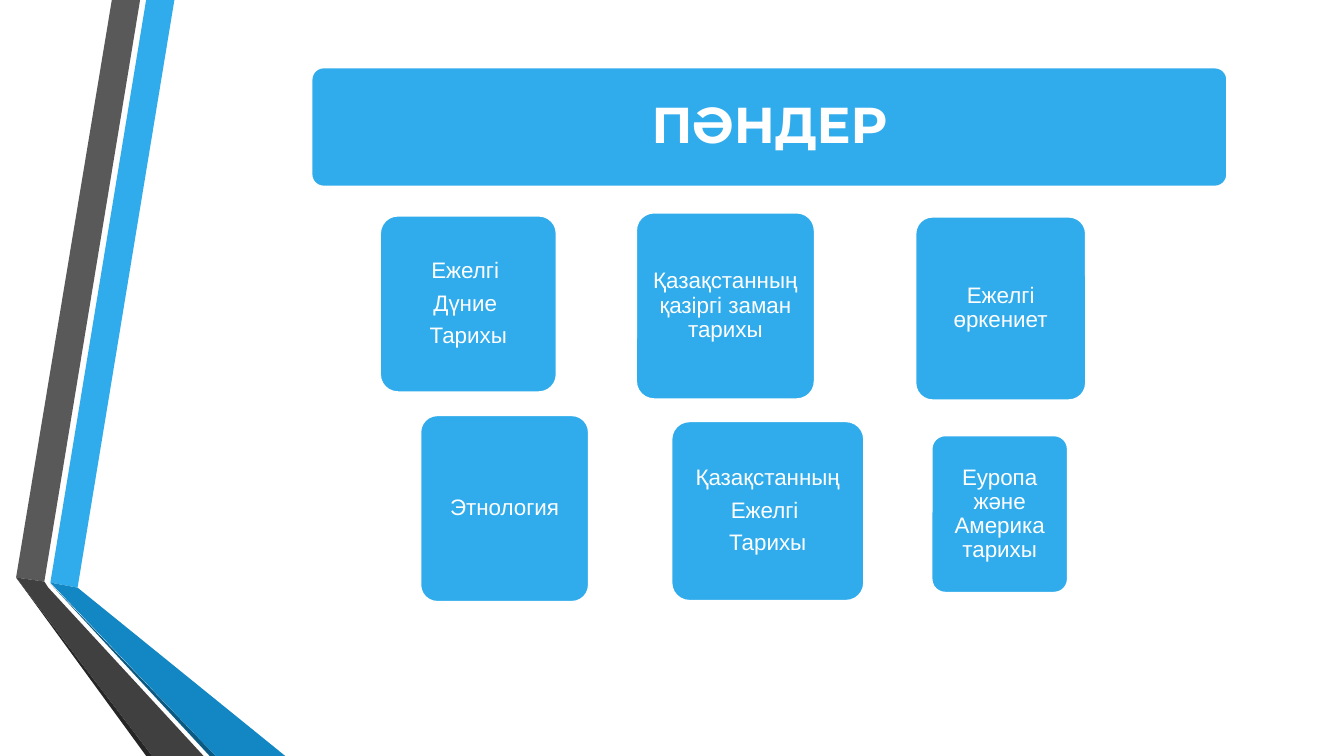
from pptx import Presentation
from pptx.dml.color import RGBColor
from pptx.enum.shapes import MSO_SHAPE
from pptx.enum.text import MSO_ANCHOR, PP_ALIGN
from pptx.util import Pt

PX = 9144
WHITE = RGBColor(0xFF, 0xFF, 0xFF)
BLUE = RGBColor(0x30, 0xAC, 0xEC)
MID_BLUE = RGBColor(0x12, 0x87, 0xC3)
DEEP_BLUE = RGBColor(0x0C, 0x5A, 0x82)
GREY = RGBColor(0x59, 0x59, 0x59)
DARK = RGBColor(0x40, 0x40, 0x40)
BLACK = RGBColor(0x26, 0x26, 0x26)

BANDS = [
    (BLUE, [(34, 578), (61, 583), (157, 0), (129, 0)]),
    (GREY, [(123, 0), (95, 0), (0, 573), (28, 577)]),
    (BLACK, [(0, 573), (129, 750), (135, 750)]),
    (DEEP_BLUE, [(34, 579), (192, 750), (198, 750)]),
    (MID_BLUE, [(34, 578), (198, 750), (267, 750), (61, 583)]),
    (DARK, [(0, 573), (135, 750), (186, 750), (32, 583), (28, 577)]),
]

CARDS = [
    ((377, 214, 175, 175), ["Ежелгі ", "Дүние ", "Тарихы"]),
    ((631, 211, 177, 185), ["Қазақстанның қазіргі заман тарихы"]),
    ((908, 215, 169, 182), ["Ежелгі өркениет"]),
    ((417, 412, 167, 185), ["Этнология"]),
    ((666, 418, 191, 178), ["Қазақстанның", "Ежелгі ", "Тарихы"]),
    ((924, 432, 135, 156), ["Еуропа және Америка тарихы"]),
]


def draw_ribbon(slide, left, top):
    for color, points in BANDS:
        spots = [(left + x, top + y) for x, y in points]
        pen = slide.shapes.build_freeform(*spots[0], scale=PX)
        pen.add_line_segments(spots[1:], close=True)
        band = pen.convert_to_shape()
        band.shadow.inherit = False
        band.fill.solid()
        band.fill.fore_color.rgb = color
        band.line.fill.background()


def draw_card(slide, box, lines, font="Arial", size=16, bold=False, inset=7):
    card = slide.shapes.add_shape(
        MSO_SHAPE.ROUNDED_RECTANGLE, *(side * PX for side in box))
    card.adjustments[0] = 0.1
    card.shadow.inherit = False
    card.fill.solid()
    card.fill.fore_color.rgb = BLUE
    card.line.color.rgb = WHITE
    card.line.width = Pt(1.25)
    frame = card.text_frame
    frame.word_wrap = True
    frame.vertical_anchor = MSO_ANCHOR.MIDDLE
    frame.margin_left = frame.margin_right = inset * PX
    frame.margin_top = frame.margin_bottom = inset * PX
    for index, line in enumerate(lines):
        para = frame.add_paragraph() if index else frame.paragraphs[0]
        para.alignment = PP_ALIGN.CENTER
        para.line_spacing = 0.9
        para.space_after = Pt(6)
        run = para.add_run()
        run.text = line
        run.font.name = font
        run.font.size = Pt(size)
        run.font.bold = bold
        run.font.color.rgb = WHITE


def draw_title(slide, box):
    draw_card(slide, box, ["ПӘНДЕР"], "Montserrat", 36, True, 15)


def main():
    deck = Presentation()
    deck.slide_width = 1333 * PX
    deck.slide_height = 750 * PX
    slide = deck.slides.add_slide(deck.slide_layouts[6])
    draw_ribbon(slide, 16, 0)
    draw_title(slide, (309, 67, 908, 118))
    for box, lines in CARDS:
        draw_card(slide, box, lines)
    deck.save("out.pptx")


if __name__ == "__main__":
    main()
